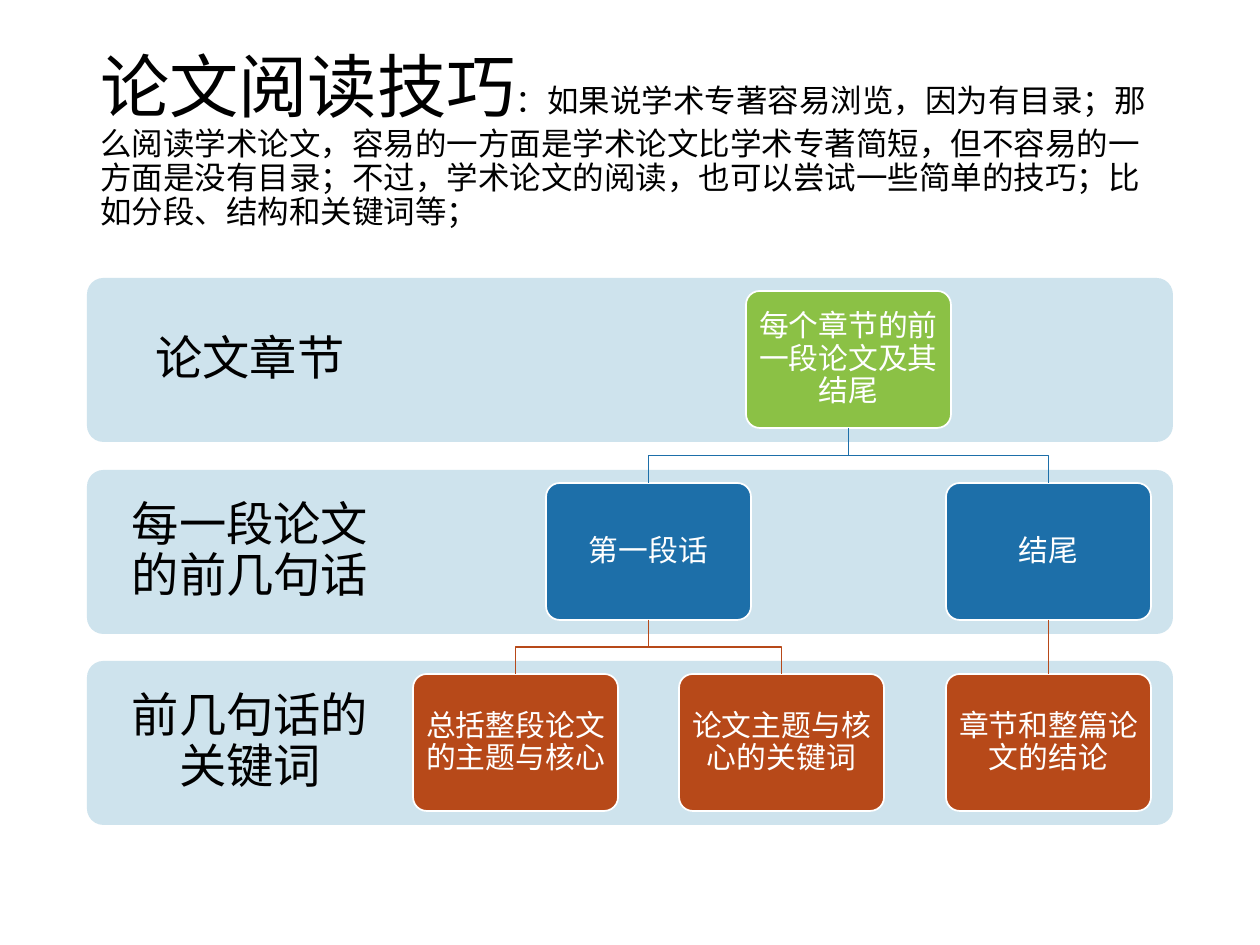
"""Build a slide on paper-reading skills with a banded hierarchy."""
from lxml.etree import SubElement
from pptx import Presentation
from pptx.dml.color import RGBColor
from pptx.enum.shapes import MSO_CONNECTOR, MSO_SHAPE
from pptx.enum.text import MSO_ANCHOR, MSO_AUTO_SIZE, PP_ALIGN
from pptx.oxml.ns import qn
from pptx.util import Pt

PX = 914400 / 126
BAND_HEIGHT = 164
BAND_STEP = 191.5
NODE_WIDTH, NODE_HEIGHT = 205, 137
NODE_STEP = 266.5
LEVEL_COLORS = ["8BC145", "1D6FA9", "B74919"]

TITLE = [
    ("论文阅读技巧", 39.6),
    ("：如果说学术专著容易浏览，因为有目录；那么阅读学术论文，容易的一方面是学术论文"
     "比学术专著简短，但不容易的一方面是没有目录；不过，学术论文的阅读，也可以尝试一些"
     "简单的技巧；比如分段、结构和关键词等；", 18),
]
BANDS = ["论文章节", "每一段论文的前几句话", "前几句话的关键词"]
TREE = ("每个章节的前一段论文及其结尾", 1.25, [
    ("第一段话", 0.5, [
        ("总括整段论文的主题与核心", 0, []),
        ("论文主题与核心的关键词", 1, []),
    ]),
    ("结尾", 2, [("章节和整篇论文的结论", 2, [])]),
])


def emu(*lengths):
    """Turn px lengths into EMU."""
    return [round(length * PX) for length in lengths]


def rgb(code):
    """Turn a hex string into a colour."""
    return RGBColor.from_string(code)


def write(frame, runs, color="000000", align=PP_ALIGN.CENTER, inset=13):
    """Write one paragraph of (text, size) runs in a text frame."""
    frame.word_wrap = True
    frame.auto_size = MSO_AUTO_SIZE.NONE
    frame.vertical_anchor = MSO_ANCHOR.MIDDLE
    frame.margin_left = frame.margin_right = emu(inset)[0]
    frame.margin_top = frame.margin_bottom = emu(min(inset, 13))[0]
    paragraph = frame.paragraphs[0]
    paragraph.alignment = align
    paragraph.line_spacing = 0.9
    for text, size in runs:
        run = paragraph.add_run()
        run.text = text
        run.font.size = Pt(size)
        run.font.name = "Times New Roman"
        run.font.color.rgb = rgb(color)


def add_panel(shapes, box, fill, outline=None):
    """Add a rounded panel, with an outline if a colour is given."""
    panel = shapes.add_shape(MSO_SHAPE.ROUNDED_RECTANGLE, *emu(*box))
    panel.adjustments[0] = 0.1
    panel.shadow.inherit = False
    panel.fill.solid()
    panel.fill.fore_color.rgb = rgb(fill)
    if outline:
        panel.line.color.rgb = rgb(outline)
        panel.line.width = Pt(1)
    else:
        panel.line.fill.background()
    return panel


def add_title(slide, box):
    """Place the title with its running explanation."""
    title = slide.shapes.title
    title.left, title.top, title.width, title.height = emu(*box)
    write(title.text_frame, TITLE, align=PP_ALIGN.LEFT)


def add_bands(shapes, box):
    """Stack the labelled level bands in the box."""
    left, top, width, _ = box
    for level, label in enumerate(BANDS):
        band_top = top + round(level * BAND_STEP)
        add_panel(shapes, (left, band_top, width, BAND_HEIGHT), "CEE3ED")
        label_box = shapes.add_textbox(*emu(left, band_top, 326, BAND_HEIGHT))
        write(label_box.text_frame, [(label, 27)], inset=26)


def join(shapes, parent, child, color):
    """Link a parent's bottom to a child's top."""
    start_x, end_x = (node.left + node.width // 2 for node in (parent, child))
    start_y, end_y = parent.top + parent.height, child.top
    if start_x == end_x:
        link = shapes.add_connector(
            MSO_CONNECTOR.STRAIGHT, start_x, start_y, end_x, end_y)
        link.begin_connect(parent, 2)
        link.end_connect(child, 0)
        SubElement(link.line._get_or_add_ln().getparent(), qn("a:effectLst"))
    else:
        middle_y = (start_y + end_y) // 2
        outline = shapes.build_freeform(start_x, start_y)
        outline.add_line_segments(
            [(start_x, middle_y), (end_x, middle_y), (end_x, end_y)], close=False)
        link = outline.convert_to_shape()
        link.fill.background()
        link.shadow.inherit = False
    link.line.color.rgb = rgb(color)
    link.line.width = Pt(1)


def add_tree(shapes, box, branch, level=0):
    """Add a branch of the hierarchy and return its top node."""
    left, top, _, _ = box
    text, column, children = branch
    node_box = (left + round(column * NODE_STEP), top + round(level * BAND_STEP),
                NODE_WIDTH, NODE_HEIGHT)
    node = add_panel(shapes, node_box, LEVEL_COLORS[level], "FFFFFF")
    write(node.text_frame, [(text, 17)], color="FFFFFF", inset=8)
    for child_branch in children:
        child = add_tree(shapes, box, child_branch, level + 1)
        join(shapes, node, child, LEVEL_COLORS[level + 1])
    return node


def main():
    """Build and save the slide."""
    deck = Presentation()
    deck.slide_width, deck.slide_height = emu(1260, 945)
    slide = deck.slides.add_slide(deck.slide_layouts[5])
    add_title(slide, (87, 50, 1086, 183))
    add_bands(slide.shapes, (87, 278, 1086, 547))
    add_tree(slide.shapes, (413, 291, 738, 520), TREE)
    deck.save("out.pptx")


if __name__ == "__main__":
    main()
